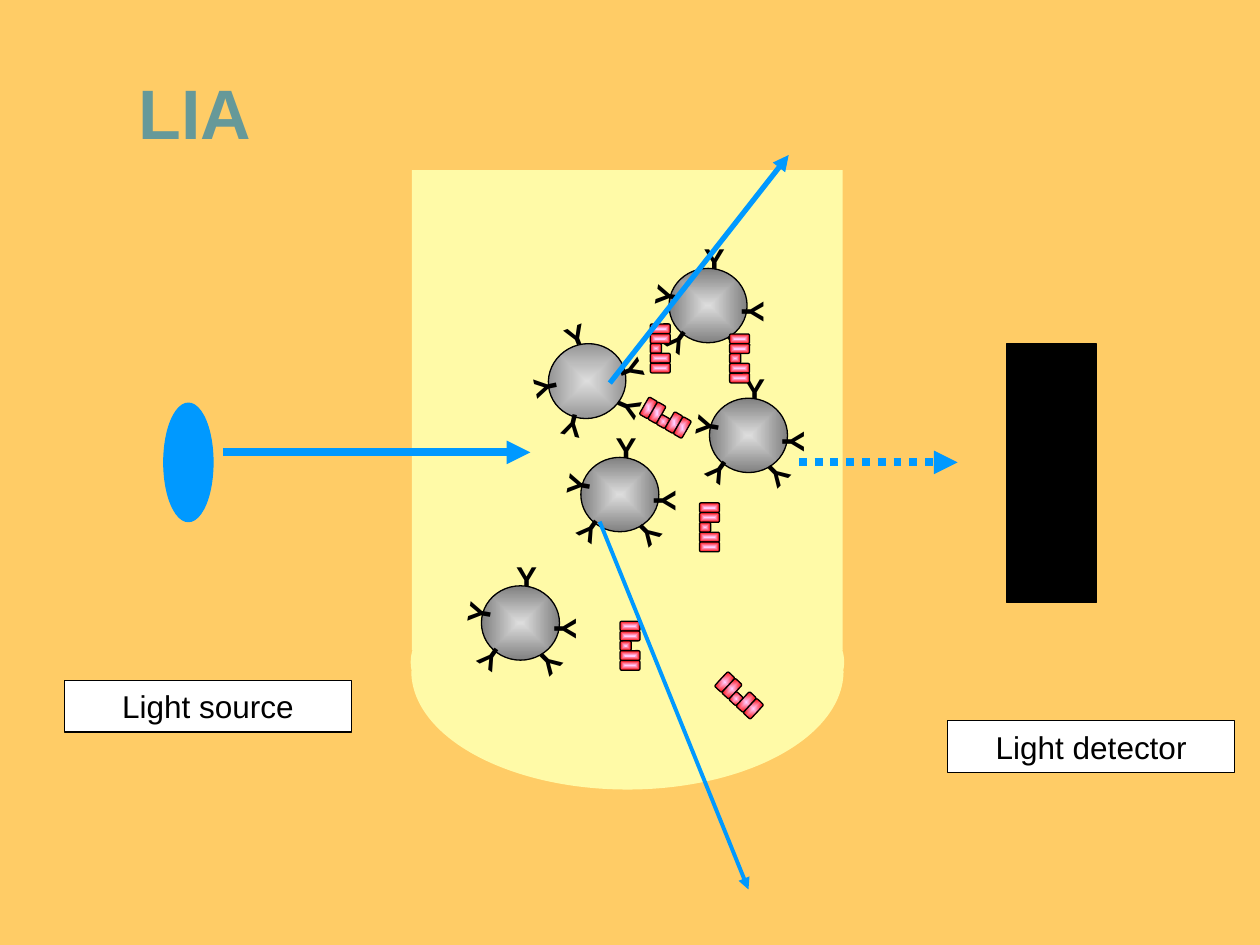
import math

import lxml.etree
import pptx
import pptx.dml.color
import pptx.enum.dml
import pptx.enum.shapes
import pptx.enum.text
import pptx.oxml.ns
import pptx.util

Pt = pptx.util.Pt
RGBColor = pptx.dml.color.RGBColor
SHAPE = pptx.enum.shapes.MSO_SHAPE
ALIGN = pptx.enum.text.PP_ALIGN
qn = pptx.oxml.ns.qn

ORANGE = RGBColor(0xFF, 0xCC, 0x66)
CREAM = RGBColor(0xFF, 0xFA, 0xA7)
TEAL = RGBColor(0x66, 0x99, 0x99)
BLUE = RGBColor(0x00, 0x99, 0xFF)
BLACK = RGBColor(0, 0, 0)
WHITE = RGBColor(0xFF, 0xFF, 0xFF)
BEAD_GRADIENT = (RGBColor(0xDD, 0xDD, 0xDD), RGBColor(0x80, 0x80, 0x80))
ROD_GRADIENT = (RGBColor(0xFF, 0xCC, 0xFF), RGBColor(0xFF, 0, 0))

# Antibodies around a bead: offset from its centre, and angle
TOP_ANTIBODY = (2, -26.5, 0)
SIDE_ANTIBODIES = [(26.5, 2, 90), (18, 22, 135), (-24.5, -4, 279.9), (-16.5, 22, 215.2)]


def turn(x, y, angle):
    cos, sin = math.cos(math.radians(angle)), math.sin(math.radians(angle))
    return x * cos - y * sin, x * sin + y * cos


class Diagram:
    """Draws in one style on the current page; all lengths are points."""

    font = "Arial"
    text_size = 18
    outline = 0.75

    def __init__(self, page, background):
        self.page = page
        page.background.fill.solid()
        page.background.fill.fore_color.rgb = background

    def shape(self, kind, left, top, width, height, fill, line=None, angle=0, parent=None):
        shapes = (parent or self.page).shapes
        shape = shapes.add_shape(kind, Pt(left), Pt(top), Pt(width), Pt(height))
        shape.rotation = angle
        shape.shadow.inherit = False
        if isinstance(fill, tuple) and not isinstance(fill, RGBColor):
            self.radial(shape, fill)
        else:
            shape.fill.solid()
            shape.fill.fore_color.rgb = fill
        if line is None:
            shape.line.fill.background()
        else:
            shape.line.color.rgb = line
            shape.line.width = Pt(self.outline)
        return shape

    def radial(self, shape, colors):
        shape.fill.gradient()
        for stop, color, position in zip(shape.fill.gradient_stops, colors, (0, 1)):
            stop.color.rgb = color
            stop.position = position
        gradient = shape._element.spPr.find(qn("a:gradFill"))
        gradient.remove(gradient.find(qn("a:lin")))
        shading = lxml.etree.SubElement(gradient, qn("a:path"), path="shape")
        lxml.etree.SubElement(shading, qn("a:fillToRect"),
                              {side: "50000" for side in "ltrb"})

    def set_text(self, box, text, size=text_size, color=BLACK, bold=False, align=ALIGN.LEFT):
        box.text_frame.word_wrap = True
        paragraph = box.text_frame.paragraphs[0]
        paragraph.text = text
        paragraph.alignment = align
        paragraph.font.name = self.font
        paragraph.font.size = Pt(size)
        paragraph.font.bold = bold
        paragraph.font.color.rgb = color

    def title(self, text, left, top, width, height):
        box = self.page.shapes.add_textbox(Pt(left), Pt(top), Pt(width), Pt(height))
        box.text_frame.margin_top = Pt(24.5)
        self.set_text(box, text, 40, TEAL, True, ALIGN.RIGHT)

    def label(self, text, left, top):
        box = self.shape(SHAPE.RECTANGLE, left, top, 164.2, 29.5, WHITE, BLACK)
        self.set_text(box, text, align=ALIGN.CENTER)

    def antibody(self, group, x, y, angle):
        width, height = 23, 28.8
        box = group.shapes.add_textbox(Pt(x - width / 2), Pt(y - height / 2),
                                       Pt(width), Pt(height))
        box.rotation = angle % 360
        self.set_text(box, "Y", bold=True)

    def bead(self, x, y, angle=0):
        group = self.page.shapes.add_group_shape()

        def attach(dx, dy, own_angle):
            dx, dy = turn(dx, dy, angle)
            self.antibody(group, x + dx, y + dy, own_angle + angle)

        width, height = 44.6, 42.5
        attach(*TOP_ANTIBODY)
        self.shape(SHAPE.OVAL, x - width / 2, y - height / 2, width, height,
                   BEAD_GRADIENT, BLACK, angle % 360, group)
        for antibody in SIDE_ANTIBODIES:
            attach(*antibody)

    def antigen(self, x, y, angle=0):
        group = self.page.shapes.add_group_shape()
        full, short, height = 11.4, 6.4, 5.6
        for row, width in enumerate((full, full, short, full, full)):
            dx, dy = turn((width - full) / 2, (row - 2) * height, angle)
            self.shape(SHAPE.ROUNDED_RECTANGLE, x + dx - width / 2, y + dy - height / 2,
                       width, height, ROD_GRADIENT, BLACK, angle + 180, group)

    def arrow(self, x1, y1, x2, y2, width, dash=None):
        arrow = self.page.shapes.add_connector(
            pptx.enum.shapes.MSO_CONNECTOR.STRAIGHT, Pt(x1), Pt(y1), Pt(x2), Pt(y2))
        arrow.line.color.rgb = BLUE
        arrow.line.width = Pt(width)
        if dash is not None:
            arrow.line.dash_style = dash
        properties = arrow._element.spPr
        lxml.etree.SubElement(properties.find(qn("a:ln")), qn("a:tailEnd"), type="triangle")
        lxml.etree.SubElement(properties, qn("a:effectLst"))


def main():
    deck = pptx.Presentation()
    deck.slide_width, deck.slide_height = Pt(720), Pt(540)
    diagram = Diagram(deck.slides.add_slide(deck.slide_layouts[6]), ORANGE)

    diagram.title("LIA", 14.4, 15.1, 136.1, 73.4)
    diagram.label("Light detector", 541.4, 411.8)

    # Cuvette
    base = diagram.shape(SHAPE.MOON, 324.7, 293.8, 67.7, 247, CREAM, angle=270)
    base.adjustments[0] = 0.5
    diagram.shape(SHAPE.OVAL, 234.7, 324.7, 247.7, 107.3, CREAM)
    diagram.shape(SHAPE.RECTANGLE, 235.4, 97.2, 246.2, 274.3, CREAM)

    # Coated beads and free antigens
    for bead in [(335.5, 217.8, -21.7), (404.6, 174.6), (427.7, 248.8),
                 (297.4, 356), (354.2, 282.6)]:
        diagram.bead(*bead)
    for antigen in [(377.3, 199.1), (380.2, 238.7, -59.9), (360, 369),
                    (422.6, 204.8), (422.3, 397.4, -47), (405.4, 301.3)]:
        diagram.antigen(*antigen)

    # Detector and light source
    diagram.shape(SHAPE.RECTANGLE, 575.3, 196.6, 51.1, 147.6, BLACK, BLACK)
    diagram.shape(SHAPE.OVAL, 93.6, 230.4, 28.1, 67.7, BLUE, BLUE)
    diagram.label("Light source", 36.7, 388.8)

    # Incoming, scattered and transmitted light
    diagram.arrow(127.4, 258.5, 303.1, 258.5, 4.5)
    diagram.arrow(348.5, 218.9, 450.7, 88.6, 3)
    diagram.arrow(342.7, 298.1, 427.7, 508.3, 2.25)
    diagram.arrow(456.5, 264.2, 547.2, 264.2, 4.5, pptx.enum.dml.MSO_LINE.ROUND_DOT)

    deck.save("out.pptx")


if __name__ == "__main__":
    main()
